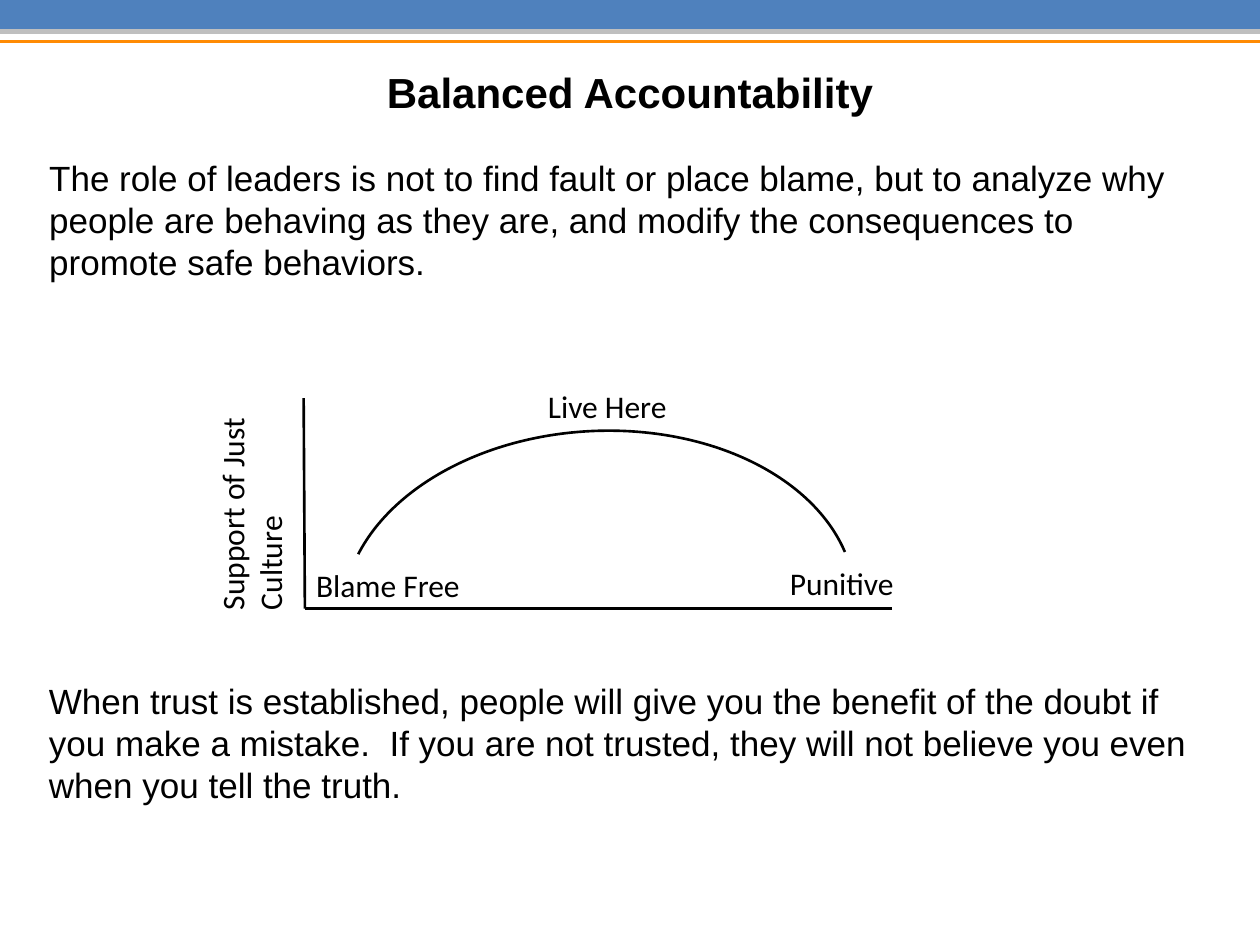
from pptx import Presentation
from pptx.dml.color import RGBColor
from pptx.enum.shapes import MSO_CONNECTOR, MSO_SHAPE
from pptx.enum.text import MSO_ANCHOR, MSO_AUTO_SIZE, PP_ALIGN
from pptx.oxml.ns import qn
from pptx.util import Emu, Pt
from lxml.etree import SubElement

SCALE = 9144  # 100 px to the inch
BLACK = "000000"


def px(*nums):
    return [Emu(n * SCALE) for n in nums]


def color(code):
    return RGBColor.from_string(code)


def place(shape, box):
    shape.left, shape.top, shape.width, shape.height = px(*box)


def write(shape, text, size=18, font="Calibri", bold=False,
          align=PP_ALIGN.LEFT, anchor=MSO_ANCHOR.TOP, fit=MSO_AUTO_SIZE.NONE):
    frame = shape.text_frame
    frame.word_wrap = True
    frame.auto_size = fit
    frame.vertical_anchor = anchor
    frame.text = text
    par = frame.paragraphs[0]
    par.alignment = align
    par.font.size = Pt(size)
    par.font.name = font
    par.font.bold = bold
    par.font.color.rgb = color(BLACK)


def label(slide, box, text, turn=0, fit=MSO_AUTO_SIZE.SHAPE_TO_FIT_TEXT, **style):
    shape = slide.shapes.add_textbox(*px(*box))
    shape.rotation = turn
    write(shape, text, fit=fit, **style)


def rule(slide, start, end, code=BLACK, width=1.5):
    line = slide.shapes.add_connector(MSO_CONNECTOR.STRAIGHT, *px(*start, *end))
    line.line.color.rgb = color(code)
    line.line.width = Pt(width)
    SubElement(line._element.spPr, qn("a:effectLst"))


def banner(slide, box):
    left, top, width, height = box
    band = slide.shapes.add_shape(MSO_SHAPE.RECTANGLE, *px(*box))
    band.shadow.inherit = False
    band.fill.solid()
    band.fill.fore_color.rgb = color("4F81BD")
    band.line.fill.background()
    base = top + height
    for y, code, width_pt in ((base, "BFBFBF", 3), (base + 8, "FF8B03", 1.5)):
        rule(slide, (left, y), (left + width, y), code, width_pt)


def graph(slide, box):
    """Draw the arch of support between its two axes."""
    left, top, width, height = box
    base = top + height
    arch = slide.shapes.add_shape(
        MSO_SHAPE.ARC, *px(left + 31, top + 26, 407, 282))
    arch.adjustments[0], arch.adjustments[1] = 117.37, 209.96
    arch.rotation = -2.9
    arch.shadow.inherit = False
    arch.fill.background()
    arch.line.color.rgb = color(BLACK)
    arch.line.width = Pt(1.5)

    rule(slide, (left, top), (left + 1, base))
    rule(slide, (left + width, base), (left + 1, base))
    label(slide, (left - 133, top + 51, 183, 71), "Support of Just Culture", turn=270)
    for x, y, wide, text in ((0, 128, 158, "Blame Free"),
                             (376, 127, 175, "Punitive"),
                             (184, -14, 117, "Live Here")):
        label(slide, (left + x, top + y, wide, 40), text)


def main():
    deck = Presentation()
    deck.slide_width, deck.slide_height = px(1000, 750)
    slide = deck.slides.add_slide(deck.slide_layouts[5])
    banner(slide, (0, -1, 1000, 26))

    title = slide.shapes.title
    place(title, (29, 101, 933, 146))
    write(title, "The role of leaders is not to find fault or place blame, but to "
          "analyze why people are behaving as they are, and modify the "
          "consequences to promote safe behaviors.",
          size=20, font="Arial", anchor=MSO_ANCHOR.MIDDLE)
    graph(slide, (241, 316, 467, 167))
    label(slide, (29, 534, 946, 111),
          "When trust is established, people will give you the benefit of the "
          "doubt if you make a mistake.  If you are not trusted, they will not "
          "believe you even when you tell the truth.", size=20, font="Arial")
    label(slide, (50, 45, 900, 55), "Balanced Accountability", size=24,
          font="Arial", bold=True, align=PP_ALIGN.CENTER,
          anchor=MSO_ANCHOR.MIDDLE, fit=MSO_AUTO_SIZE.NONE)
    deck.save("out.pptx")


if __name__ == "__main__":
    main()
